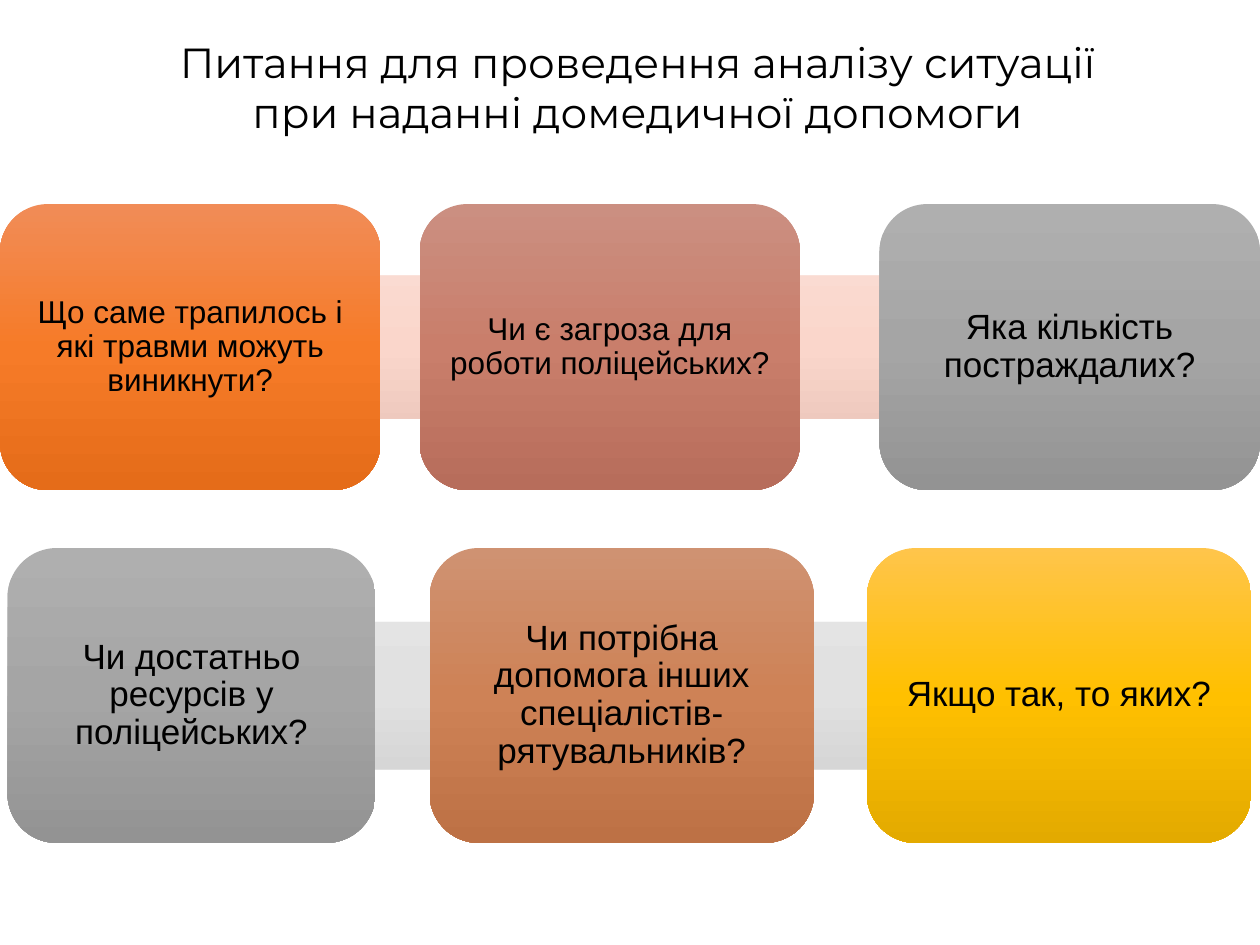
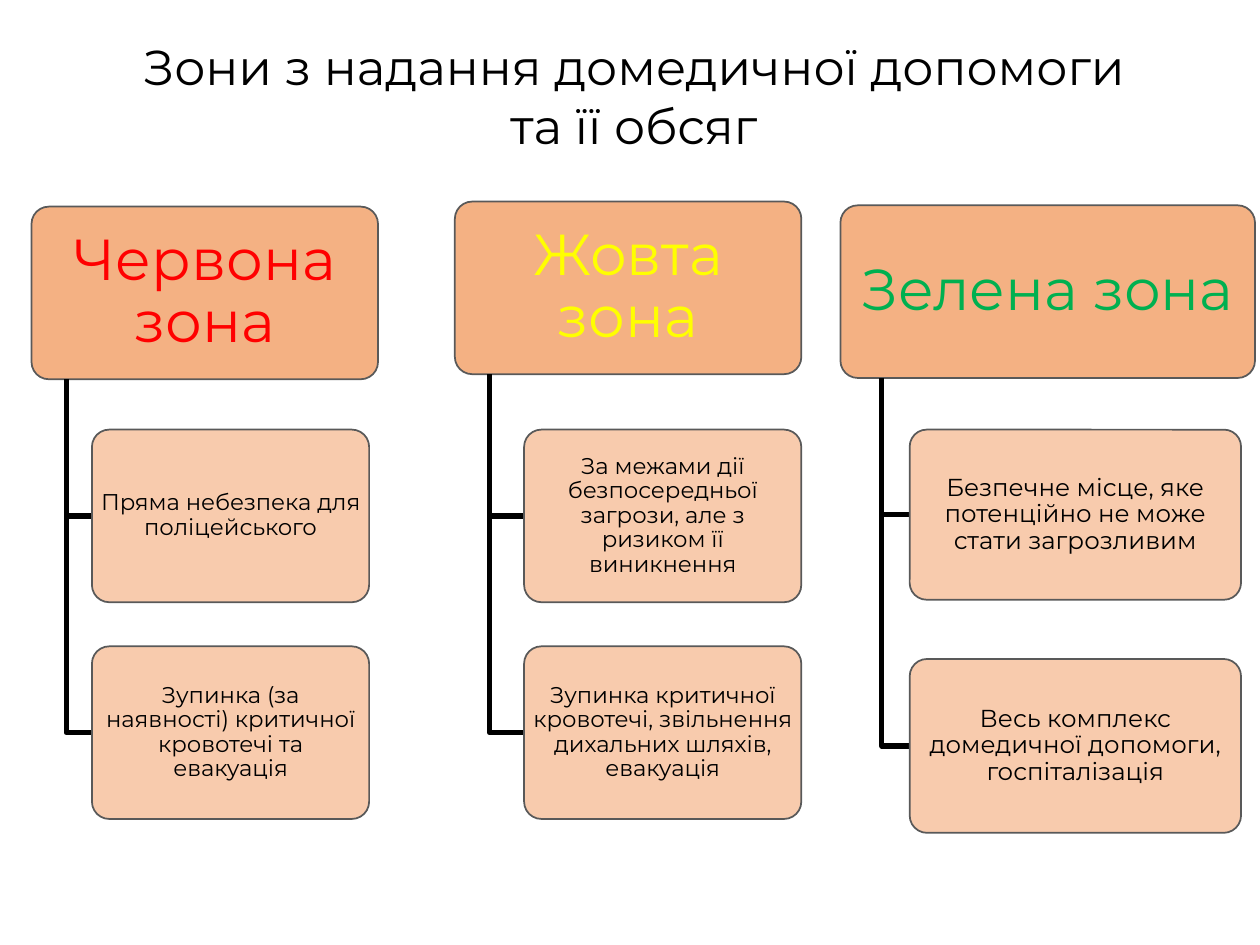
from copy import deepcopy

from pptx import Presentation
from pptx.dml.color import RGBColor
from pptx.enum.shapes import MSO_SHAPE as Kind
from pptx.enum.text import MSO_ANCHOR as Anchor, MSO_AUTO_SIZE as Fit, PP_ALIGN as Align
from pptx.util import Inches, Pt

BLACK, EDGE = "000000", "595959"
HEAD, KID = "F4B183", "F8CBAD"
GRAY = ("AFAFAF", "A5A5A5", "939393")

ROWS = [
    ((0, 1.62, 10, 2.27), ("FAE0D8", "FAD6CB", "E2BCB1"), [
        (0, 3.02, 18, ("F18C57", "F67B28", "E56C19"),
         "Що саме трапилось і які травми можуть виникнути?"),
        (3.33, 3.02, 18, ("CB8F81", "C97E6B", "B76D5B"),
         "Чи є загроза для роботи поліцейських?"),
        (6.98, 3.02, 20, GRAY, "Яка кількість постраждалих?"),
    ]),
    ((0.8, 4.35, 8.4, 2.34), ("E7E7E7", "E1E1E1", "C8C8C8"), [
        (0.06, 2.92, 20, GRAY, "Чи достатньо ресурсів у поліцейських?"),
        (3.41, 3.05, 20, ("CF9272", "CE8256", "BD7145"),
         "Чи потрібна допомога інших спеціалістів-рятувальників?"),
        (6.88, 3.05, 20, ("FFC54B", "FFC000", "E3AA00"), "Якщо так, то яких?"),
    ]),
]

ZONES = [
    ("Червона зона", "FF0000", (0.25, 1.64, 2.75), (0.73, 2.2, 13), [
        (3.41, 1.37, "Пряма небезпека для поліцейського"),
        (5.13, 1.37, "Зупинка (за наявності) критичної кровотечі та евакуація"),
    ]),
    ("Жовта зона", "FFFF00", (3.61, 1.6, 2.75), (4.16, 2.2, 13), [
        (3.41, 1.37, "За межами дії безпосередньої загрози, але з ризиком її виникнення"),
        (5.13, 1.37, "Зупинка критичної кровотечі, звільнення дихальних шляхів, евакуація"),
    ]),
    ("Зелена зона", "00B050", (6.67, 1.63, 3.29), (7.22, 2.63, 14), [
        (3.41, 1.35, "Безпечне місце, яке потенційно не може стати загрозливим"),
        (5.23, 1.38, "Весь комплекс домедичної допомоги, госпіталізація"),
    ]),
]


def rgb(code):
    return RGBColor.from_string(code)


class Deck:
    """Holds the shared style and the slide being built."""

    def __init__(self):
        self.prs = Presentation()
        self.prs.slide_width, self.prs.slide_height = Inches(10), Inches(7.5)
        self.slide = None

    def page(self, lines, at, size):
        self.slide = self.prs.slides.add_slide(self.prs.slide_layouts[5])
        title = self.slide.shapes.title
        title.left, title.top, title.width, title.height = map(Inches, at)
        frame = title.text_frame
        frame.text = "\n".join(lines)
        frame.auto_size = Fit.NONE
        frame.vertical_anchor = Anchor.TOP
        for para in frame.paragraphs:
            self.style(para, "Montserrat", size, BLACK)

    def style(self, para, face, size, color):
        para.alignment = Align.CENTER
        font = para.font
        font.name, font.size, font.color.rgb = face, Pt(size), rgb(color)

    def shape(self, kind, at, fill, edge=None):
        shape = self.slide.shapes.add_shape(kind, *map(Inches, at))
        shape.shadow.inherit = False
        if isinstance(fill, tuple):
            self.blend(shape.fill, fill)
        else:
            shape.fill.solid()
            shape.fill.fore_color.rgb = rgb(fill)
        if edge:
            shape.line.color.rgb, shape.line.width = rgb(edge), Pt(1)
        else:
            shape.line.fill.background()
        return shape

    def blend(self, fill, colors):
        fill.gradient()
        fill.gradient_angle = 270
        last = fill.gradient_stops[-1]._gs
        last.addnext(deepcopy(last))
        for i, (stop, color) in enumerate(zip(fill.gradient_stops, colors)):
            stop.color.rgb, stop.position = rgb(color), i / 2

    def text(self, shape, words, face, size, color, pad):
        frame = shape.text_frame
        frame.word_wrap = True
        frame.vertical_anchor = Anchor.MIDDLE
        frame.margin_left = frame.margin_right = Inches(pad[0])
        frame.margin_top = frame.margin_bottom = Inches(pad[1])
        para = frame.paragraphs[0]
        para.text, para.line_spacing = words, 0.9
        self.style(para, face, size, color)

    def card(self, at, fill, words, size, color, pad):
        box = self.shape(Kind.ROUNDED_RECTANGLE, at, fill, EDGE)
        box.adjustments[0] = 0.1
        self.text(box, words, "Montserrat", size, color, pad)

    def elbow(self, x, top, end, mid):
        x, top, end, mid = map(Inches, (x, top, end, mid))
        pen = self.slide.shapes.build_freeform(x, top)
        pen.add_line_segments([(x, mid), (end, mid)], close=False)
        line = pen.convert_to_shape()
        line.shadow.inherit = False
        line.fill.background()
        line.line.color.rgb, line.line.width = rgb(BLACK), Pt(3)

    def row(self, at, fill, boxes):
        self.shape(Kind.RIGHT_ARROW, at, fill)
        for left, width, size, tint, words in boxes:
            box = self.shape(Kind.ROUNDED_RECTANGLE, (left, at[1], width, at[3]), tint)
            pad = size / 250
            self.text(box, words, "Arial", size, BLACK, (pad, pad))

    def zone(self, name, color, head, kid, items):
        left, top, width = head
        start, span, size = kid
        tall = 1.37
        self.card((left, top, width, tall), HEAD, name, 33, color, (0.07, 0.05))
        for y, high, words in items:
            self.elbow(left + width / 10, top + tall, start, y + high / 2)
            self.card((start, y, span, high), KID, words, size, BLACK, (0.03, 0.02))


def main():
    deck = Deck()
    deck.page(["Питання для проведення аналізу ситуації",
               "при наданні домедичної допомоги"], (0.92, 0.24, 8.28, 0.91), 24)
    for row in ROWS:
        deck.row(*row)
    deck.page(["Зони з надання домедичної допомоги",
               "та її обсяг"], (0.64, 0.24, 8.78, 1.04), 28)
    for zone in ZONES:
        deck.zone(*zone)
    deck.prs.save("out.pptx")


if __name__ == "__main__":
    main()
